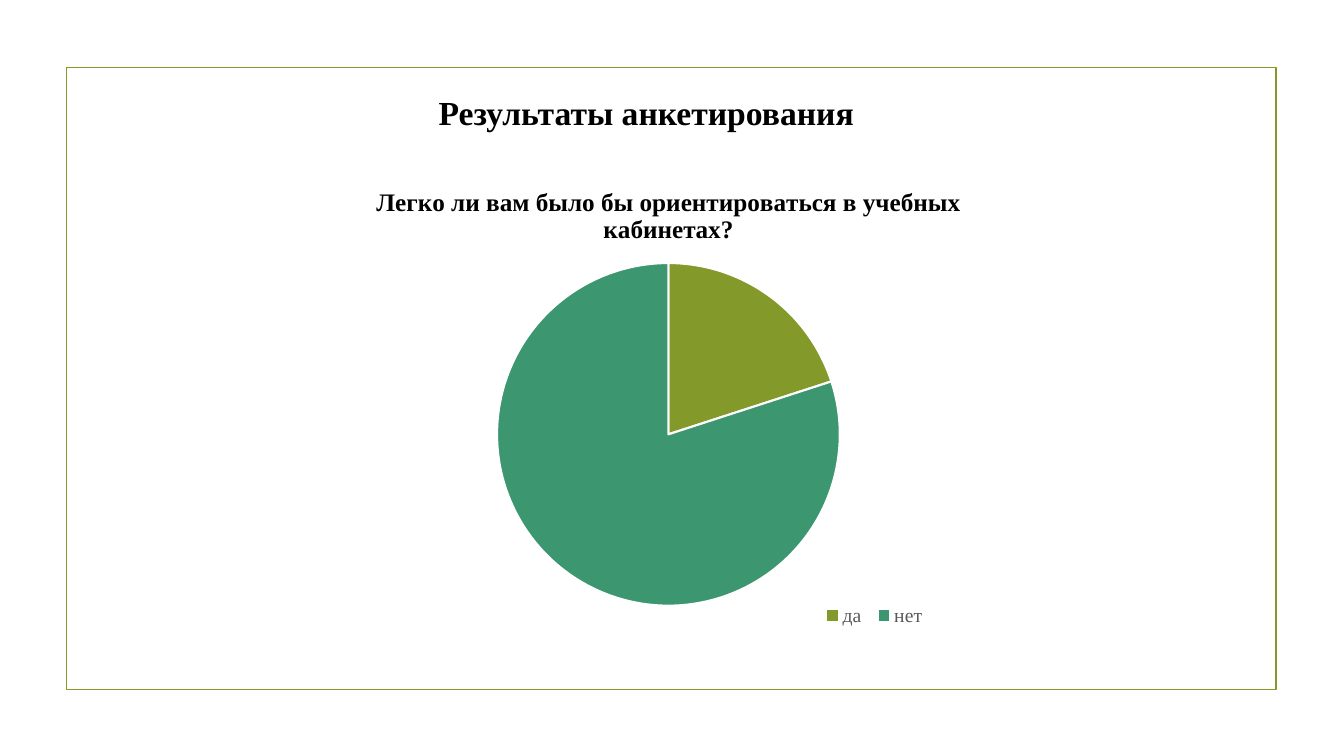
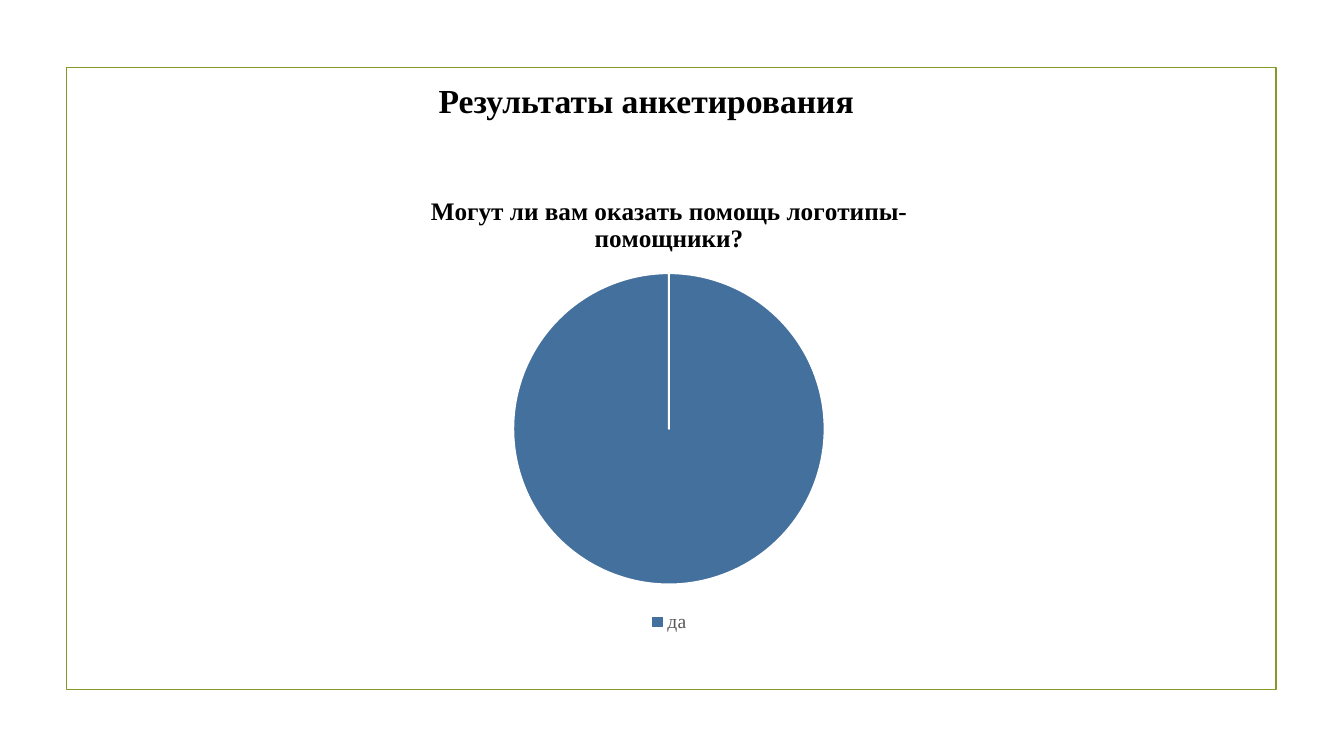
from dataclasses import dataclass

from lxml.etree import SubElement
from pptx import Presentation
from pptx.chart.data import CategoryChartData as ChartData
from pptx.dml.color import RGBColor
from pptx.enum.chart import XL_CHART_TYPE as ChartType, XL_LEGEND_POSITION as LegendPosition
from pptx.enum.shapes import MSO_SHAPE as Shape
from pptx.enum.text import MSO_ANCHOR as Anchor, PP_ALIGN as Align
from pptx.oxml.ns import qn
from pptx.util import Inches, Pt


@dataclass(frozen=True)
class Theme:
    font: str = "Times New Roman"
    background: str = "FFFFFF"
    ink: str = "000000"
    muted: str = "595959"
    olive: str = "83992A"
    green: str = "3C9770"
    blue: str = "44709D"
    title_size: int = 24
    chart_title_size: int = 18
    legend_size: int = 14
    chart_size: int = 10
    frame_width: float = 1.25
    slice_gap: float = 1.5


def color(value):
    return RGBColor.from_string(value)


def format_font(font, *, name, size, ink, bold=False):
    font.name, font.size, font.bold = name, Pt(size), bold
    font.color.rgb = color(ink)


def write_text(text_frame, text, *, align=Align.LEFT, **font_format):
    paragraph = text_frame.paragraphs[0]
    paragraph.alignment = align
    run = paragraph.add_run()
    run.text = text
    format_font(run.font, **font_format)


def place_part(parent, index, chart_box, part_box, inner=False):
    for old_layout in parent.findall(qn("c:layout")):
        parent.remove(old_layout)
    layout = SubElement(parent, qn("c:layout"))
    parent.insert(index, layout)
    manual = SubElement(layout, qn("c:manualLayout"))
    left, top, width, height = chart_box
    x, y, part_width, part_height = part_box
    settings = [("layoutTarget", "inner")] if inner else []
    settings += [
        ("xMode", "edge"),
        ("yMode", "edge"),
        ("x", (x - left) / width),
        ("y", (y - top) / height),
        ("w", part_width / width),
        ("h", part_height / height),
    ]
    for tag, value in settings:
        SubElement(manual, qn(f"c:{tag}")).set("val", str(value))


class SurveyDeck:
    """Builds survey result slides in one shared style."""

    def __init__(self, theme):
        self.theme = theme
        self.presentation = Presentation()
        self.presentation.slide_width = Inches(13.33)
        self.presentation.slide_height = Inches(7.5)
        self.slide = None

    def add_slide(self):
        self.slide = self.presentation.slides.add_slide(self.presentation.slide_layouts[5])
        fill = self.slide.background.fill
        fill.solid()
        fill.fore_color.rgb = color(self.theme.background)
        self.add_frame()

    def add_frame(self):
        box = map(Inches, (0.66, 0.67, 12, 6.17))
        shape = self.slide.shapes.add_shape(Shape.RECTANGLE, *box)
        shape.shadow.inherit = False
        shape.fill.background()
        shape.line.color.rgb = color(self.theme.olive)
        shape.line.width = Pt(self.theme.frame_width)

    def add_title(self, text, top):
        title = self.slide.shapes.title
        title.left, title.top, title.width, title.height = map(Inches, (4.25, top, 8.1, 0.5))
        title.text_frame.vertical_anchor = Anchor.TOP
        write_text(title.text_frame, text, name=self.theme.font,
                   size=self.theme.title_size, ink=self.theme.ink, bold=True)

    def add_pie(self, question, answers, box, pie_box, legend_box=None):
        theme = self.theme
        data = ChartData()
        data.categories = [answer for answer, _, _ in answers]
        data.add_series("Series 1", [share for _, share, _ in answers])
        graphic = self.slide.shapes.add_chart(ChartType.PIE, *map(Inches, box), data)
        chart = graphic.chart
        format_font(chart.font, name=theme.font, size=theme.chart_size, ink=theme.ink)
        chart.has_title = True
        write_text(chart.chart_title.text_frame, question, align=Align.CENTER,
                   name=theme.font, size=theme.chart_title_size, ink=theme.ink, bold=True)
        plot = chart.plots[0]
        plot.vary_by_categories = True
        for index, (_, _, fill_color) in enumerate(answers):
            point = plot.series[0].points[index].format
            point.fill.solid()
            point.fill.fore_color.rgb = color(fill_color)
            point.line.color.rgb = color(theme.background)
            point.line.width = Pt(theme.slice_gap)
        chart.has_legend = True
        legend = chart.legend
        legend.position = LegendPosition.BOTTOM
        legend.include_in_layout = False
        format_font(legend.font, name=theme.font, size=theme.legend_size, ink=theme.muted)
        chart_element = chart.element.find(qn("c:chart"))
        place_part(chart_element.find(qn("c:plotArea")), 0, box, pie_box, inner=True)
        if legend_box:
            place_part(chart_element.find(qn("c:legend")), 1, box, legend_box)


def main():
    theme = Theme()
    deck = SurveyDeck(theme)
    heading = "Результаты анкетирования"

    deck.add_slide()
    deck.add_title(heading, top=0.86)
    deck.add_pie(
        "Легко ли вам было бы ориентироваться в учебных кабинетах?",
        [("да", 20, theme.olive), ("нет", 80, theme.green)],
        box=(2.73, 1.65, 7.8, 4.87),
        pie_box=(4.93, 2.61, 3.4, 3.4),
        legend_box=(8.1, 5.93, 1.15, 0.35),
    )

    deck.add_slide()
    deck.add_title(heading, top=0.74)
    deck.add_pie(
        "Могут ли вам оказать помощь логотипы-помощники?",
        [("да", 100, theme.blue)],
        box=(2.75, 1.75, 7.77, 4.57),
        pie_box=(5.09, 2.71, 3.09, 3.09),
    )

    deck.presentation.save("out.pptx")


if __name__ == "__main__":
    main()
